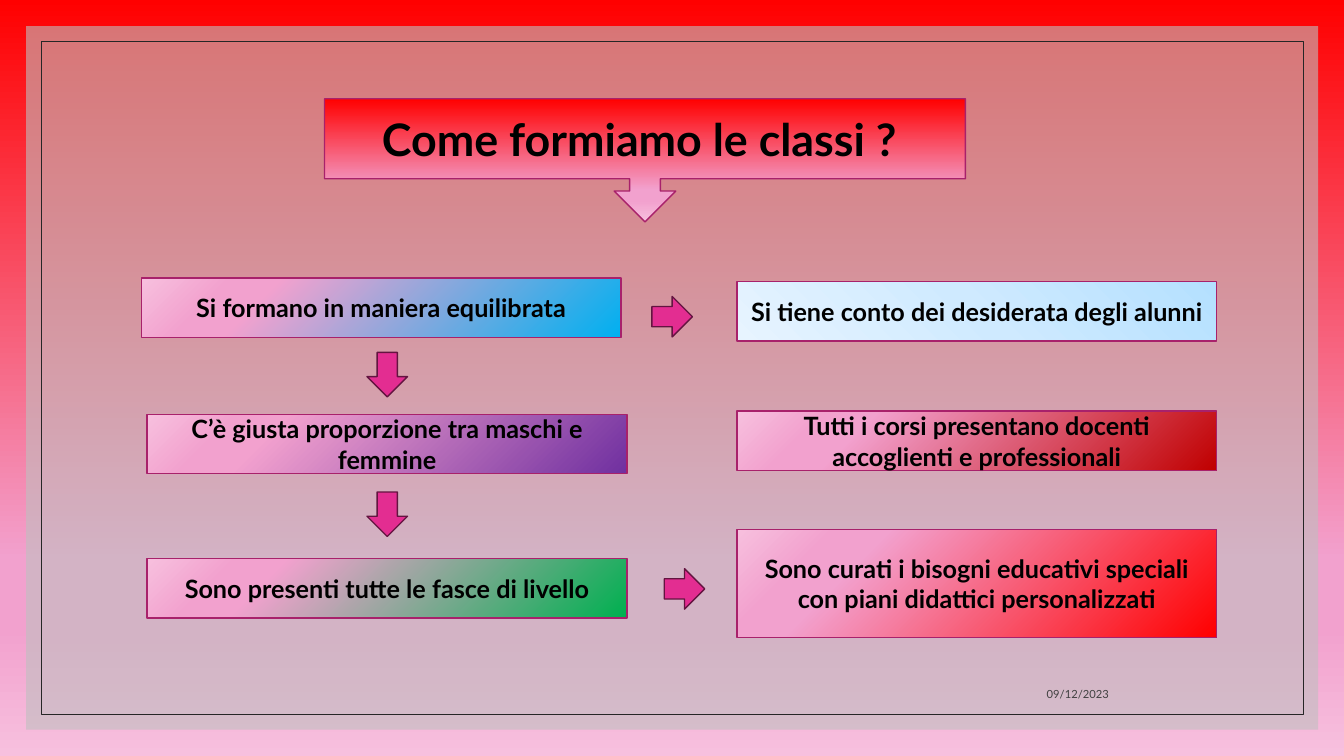
"""Build the slide on how school classes are formed."""
from lxml.etree import SubElement
from pptx import Presentation
from pptx.dml.color import RGBColor
from pptx.enum.shapes import MSO_SHAPE as Preset
from pptx.enum.text import MSO_ANCHOR as Anchor, PP_ALIGN as Align
from pptx.oxml.ns import qn
from pptx.util import Cm, Pt

COLORS = {
    "red": "FF0000", "dark red": "C00000", "purple": "7030A0",
    "green": "00B050", "blue": "00B0F0", "pink": "F2A1CE",
    "pale pink": "F7C0DE", "magenta": "E32D91", "border": "A8216B",
    "plum": "631440", "sky": "B4E0FF", "light sky": "CFEAFF",
    "pale sky": "E7F4FF", "grey": "BFBFBF", "frame": "262626",
    "date": "404040", "text": "000000",
}
FONT = "Lato"
TITLE = "Come formiamo le classi ? "
DATE = "09/12/2023"
LEFT, RIGHT = 3.71, 18.57
BOX_WIDTH, BOX_HEIGHT = 12.09, 1.5
ARROW = 1.02
CALLOUT = (8.18, 2.49, 16.15, 3.1)
CALLOUT_BODY = 0.65
SKY_STOPS = [(0, "sky"), (50, "light sky"), (100, "pale sky")]

BOXES = [
    ("Tutti i corsi presentano docenti accoglienti e professionali",
     RIGHT, 10.36, BOX_HEIGHT, "dark red"),
    ("Sono curati i bisogni educativi speciali con piani didattici personalizzati",
     RIGHT, 13.34, 2.72, "red"),
    ("Si tiene conto dei desiderata degli alunni",
     RIGHT, 7.09, BOX_HEIGHT, "sky"),
    ("C’è giusta proporzione tra maschi e femmine",
     LEFT, 10.44, BOX_HEIGHT, "purple"),
    ("Sono presenti tutte le fasce di livello",
     LEFT, 14.07, BOX_HEIGHT, "green"),
    ("Si formano in maniera equilibrata",
     3.56, 7.01, BOX_HEIGHT, "blue"),
]
ARROWS = [
    (Preset.DOWN_ARROW, 9.25, 8.88, 1.12),
    (Preset.DOWN_ARROW, 9.25, 12.4, 1.12),
    (Preset.RIGHT_ARROW, 16.43, 7.47, ARROW),
    (Preset.RIGHT_ARROW, 16.74, 14.33, ARROW),
]


def rgb(name):
    return RGBColor.from_string(COLORS[name])


def pink_stops(name):
    return [(0, name), (74, "pink"), (83, "pink"), (100, "pale pink")]


def set_gradient(fill, properties, stops, angle=None):
    """Fill with a linear gradient, or one from the lower right corner."""
    fill.solid()
    solid = properties.find(qn("a:solidFill"))
    gradient = solid.makeelement(qn("a:gradFill"), {"rotWithShape": "1"})
    stop_list = SubElement(gradient, qn("a:gsLst"))
    for position, name in stops:
        stop = SubElement(stop_list, qn("a:gs"), pos=str(position * 1000))
        SubElement(stop, qn("a:srgbClr"), val=COLORS[name])
    if angle is None:
        path = SubElement(gradient, qn("a:path"), {"path": "circle"})
        SubElement(path, qn("a:fillToRect"), l="100000", t="100000")
        SubElement(gradient, qn("a:tileRect"), r="-100000", b="-100000")
    else:
        SubElement(gradient, qn("a:lin"), ang=str(angle * 60000), scaled="0")
    properties.replace(solid, gradient)


def add_shape(slide, preset, area, line=None, width=1):
    shape = slide.shapes.add_shape(preset, *map(Cm, area))
    shape.shadow.inherit = False
    shape.fill.background()
    if line:
        shape.line.color.rgb = rgb(line)
        shape.line.width = Pt(width)
    else:
        shape.line.fill.background()
    return shape


def set_text(shape, text, size, color="text", bold=True,
             align=Align.CENTER, anchor=Anchor.MIDDLE):
    frame = shape.text_frame
    frame.text = text
    frame.word_wrap = True
    frame.vertical_anchor = anchor
    paragraph = frame.paragraphs[0]
    paragraph.alignment = align
    font = paragraph.runs[0].font
    font.name, font.size, font.bold = FONT, Pt(size), bold
    font.color.rgb = rgb(color)


def add_background(slide):
    fill = slide.background.fill
    fill.solid()
    properties = slide.element.find(".//" + qn("p:bgPr"))
    set_gradient(fill, properties, pink_stops("red"), 90)
    panel = add_shape(slide, Preset.RECTANGLE, (0.66, 0.66, 32.56, 17.73))
    panel.fill.solid()
    panel.fill.fore_color.rgb = rgb("grey")
    color = panel.element.spPr.find(qn("a:solidFill"))[0]
    SubElement(color, qn("a:alpha"), val="60000")
    add_shape(slide, Preset.RECTANGLE, (1.04, 1.04, 31.8, 16.97), "frame", 0.5)


def add_title(slide):
    left, top, width, height = CALLOUT
    callout = add_shape(slide, Preset.DOWN_ARROW_CALLOUT, CALLOUT, "border")
    set_gradient(callout.fill, callout.element.spPr, pink_stops("red"), 90)
    title = slide.shapes.title
    title.left, title.top = Cm(left), Cm(top)
    title.width, title.height = Cm(width), Cm(height * CALLOUT_BODY)
    set_text(title, TITLE, 32)
    callout.element.addnext(title.element)


def main():
    presentation = Presentation()
    presentation.slide_width, presentation.slide_height = Cm(33.87), Cm(19.05)
    slide = presentation.slides.add_slide(presentation.slide_layouts[5])
    add_background(slide)

    date = slide.shapes.add_textbox(Cm(20.17), Cm(16.76), Cm(8.03), Cm(1.02))
    set_text(date, DATE, 8, "date", False, Align.RIGHT, Anchor.BOTTOM)

    for text, left, top, height, color in BOXES:
        area = (left, top, BOX_WIDTH, height)
        box = add_shape(slide, Preset.RECTANGLE, area, "border")
        if color == "sky":
            set_gradient(box.fill, box.element.spPr, SKY_STOPS, 135)
        else:
            set_gradient(box.fill, box.element.spPr, pink_stops(color))
        set_text(box, text, 18)

    add_title(slide)
    for preset, left, top, height in ARROWS:
        arrow = add_shape(slide, preset, (left, top, ARROW, height), "plum")
        arrow.fill.solid()
        arrow.fill.fore_color.rgb = rgb("magenta")

    presentation.save("out.pptx")


if __name__ == "__main__":
    main()
